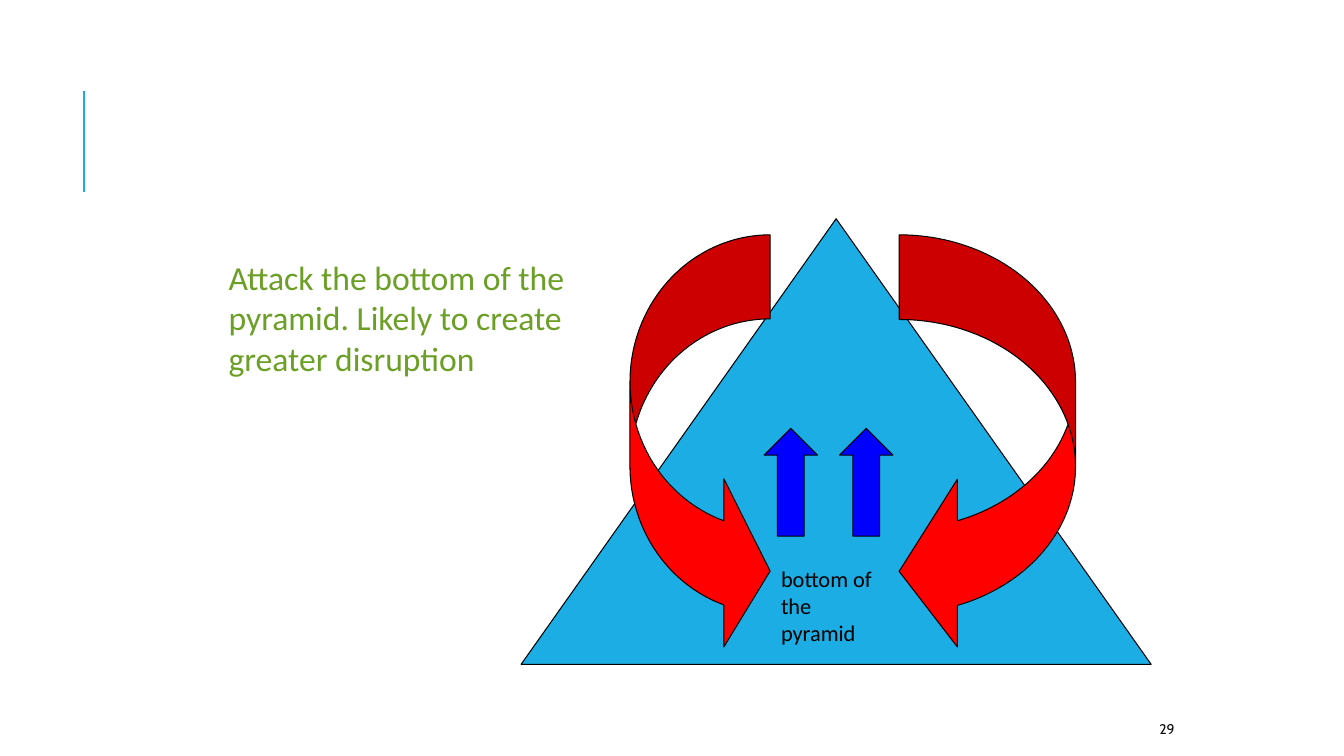
from lxml import etree
from pptx import Presentation
from pptx.dml.color import RGBColor
from pptx.enum.shapes import MSO_CONNECTOR, MSO_SHAPE
from pptx.enum.text import MSO_ANCHOR, PP_ALIGN
from pptx.oxml.ns import qn
from pptx.util import Inches, Pt

LEFT, RIGHT = PP_ALIGN.LEFT, PP_ALIGN.RIGHT
TOP, MIDDLE = MSO_ANCHOR.TOP, MSO_ANCHOR.MIDDLE
TRIANGLE, UP_ARROW = MSO_SHAPE.ISOSCELES_TRIANGLE, MSO_SHAPE.UP_ARROW
CURVED_RIGHT, CURVED_LEFT = MSO_SHAPE.CURVED_RIGHT_ARROW, MSO_SHAPE.CURVED_LEFT_ARROW
STRAIGHT = MSO_CONNECTOR.STRAIGHT

COLORS = {
    "sky": "1CADE4",
    "red": "FF0000",
    "blue": "0000FF",
    "green": "6B9F25",
    "black": "000000",
    "number": "0D0D0D",
}

presentation = Presentation()
presentation.slide_width = Inches(40 / 3)
presentation.slide_height = Inches(7.5)
slide = presentation.slides.add_slide(presentation.slide_layouts[6])


def color(name):
    return RGBColor.from_string(COLORS[name])


def add_text(lines, box, size, fill, font="Calibri", align=LEFT, anchor=TOP, wrap=True):
    shape = slide.shapes.add_textbox(*map(Inches, box))
    frame = shape.text_frame
    frame.word_wrap = wrap
    frame.vertical_anchor = anchor
    frame.text = "\n".join(lines)
    for paragraph in frame.paragraphs:
        paragraph.alignment = align
        paragraph.font.size = Pt(size)
        paragraph.font.name = font
        paragraph.font.color.rgb = color(fill)


title_rule = slide.shapes.add_connector(
    STRAIGHT, Inches(0.83), Inches(1.9), Inches(0.83), Inches(0.9)
)
title_rule.line.color.rgb = color("sky")
title_rule.line.width = Pt(1.5)
etree.SubElement(title_rule._element.spPr, qn("a:effectLst"))

add_text(["29"], (5.3, 7.08, 6.45, 0.3), size=10, fill="number", font="Cabin",
         align=RIGHT, anchor=MIDDLE)

diagram = [
    (TRIANGLE, (5.17, 2.17, 6.25, 4.42), "sky", [0.5]),
    (CURVED_RIGHT, (6.25, 2.33, 1.39, 4.17), "red", [0.6, 1.2, 0.33]),
    (CURVED_LEFT, (8.92, 2.33, 1.75, 4.17), "red", [0.48, 0.95, 0.33]),
    (UP_ARROW, (7.58, 4.25, 0.53, 1.07), "blue", [0.5, 0.5]),
    (UP_ARROW, (8.33, 4.25, 0.53, 1.07), "blue", [0.5, 0.5]),
]
for kind, box, fill, adjustments in diagram:
    shape = slide.shapes.add_shape(kind, *map(Inches, box))
    shape.shadow.inherit = False
    shape.fill.solid()
    shape.fill.fore_color.rgb = color(fill)
    shape.line.color.rgb = color("black")
    shape.line.width = Pt(0.75)
    for index, value in enumerate(adjustments):
        shape.adjustments[index] = value

add_text(["Attack the bottom of the", "pyramid. Likely to create", "greater disruption"],
         (2.17, 2.5, 3.54, 1.31), size=24, fill="green", wrap=False)
add_text(["bottom of", "the pyramid"], (7.65, 5.56, 1.28, 0.64), size=16, fill="black")

presentation.save("out.pptx")
